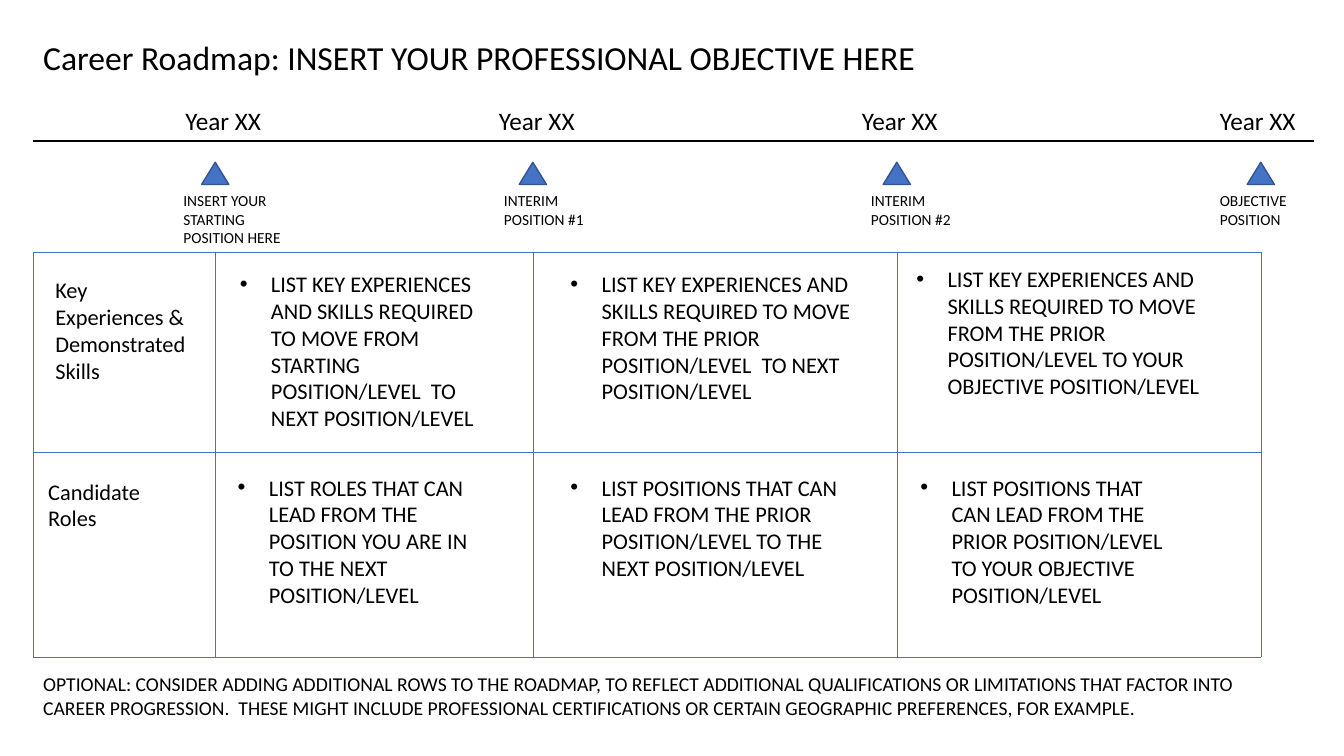
from collections import namedtuple
from dataclasses import dataclass

from lxml.etree import SubElement
from pptx import Presentation
from pptx.dml.color import RGBColor
from pptx.enum.shapes import MSO_CONNECTOR as Connector, MSO_SHAPE as Shape
from pptx.enum.text import MSO_AUTO_SIZE as AutoSize
from pptx.oxml.ns import qn
from pptx.util import Inches, Pt


@dataclass(frozen=True)
class Theme:
    font: str = "Calibri"
    ink: RGBColor = RGBColor(0x00, 0x00, 0x00)
    accent: RGBColor = RGBColor(0x44, 0x72, 0xC4)
    marker_edge: RGBColor = RGBColor(0x32, 0x54, 0x91)
    title: float = 24
    year: float = 18
    body: float = 16
    note: float = 14
    label: float = 11
    axis_width: float = 1.5
    marker_width: float = 1
    grid_width: float = 0.5


THEME = Theme()
Box = namedtuple("Box", "left top width height")
Stop = namedtuple("Stop", "x year_dx label_dx label_width label_height label")
Entry = namedtuple("Entry", "dx dy width height text")

STOPS = [
    Stop(2.14, -0.4, -0.42, 1.32, 0.66, "INSERT YOUR STARTING POSITION HERE"),
    Stop(5.29, -0.44, -0.39, 1.04, 0.47, "INTERIM POSITION #1"),
    Stop(8.9, -0.45, -0.36, 1, 0.47, "INTERIM POSITION #2"),
    Stop(12.51, -0.51, -0.51, 1.04, 0.47, "OBJECTIVE POSITION"),
]
EXPERIENCE = "LIST KEY EXPERIENCES AND SKILLS REQUIRED TO MOVE FROM "
POSITIONS = "LIST POSITIONS THAT CAN LEAD FROM THE PRIOR POSITION/LEVEL TO "
ROWS = [
    [
        Entry(0.12, 0.19, 1.61, 1.18, "Key Experiences & Demonstrated Skills"),
        Entry(0.14, 0.13, 2.77, 1.99,
              EXPERIENCE + "STARTING POSITION/LEVEL  TO NEXT POSITION/LEVEL"),
        Entry(0.27, 0.13, 3.34, 1.45,
              EXPERIENCE + "THE PRIOR POSITION/LEVEL  TO NEXT POSITION/LEVEL"),
        Entry(0.09, 0.08, 3.34, 1.45,
              EXPERIENCE + "THE PRIOR POSITION/LEVEL TO YOUR OBJECTIVE POSITION/LEVEL"),
    ],
    [
        Entry(0.05, 0.2, 1.32, 0.64, "Candidate Roles"),
        Entry(0.12, 0.16, 2.77, 1.72,
              "LIST ROLES THAT CAN LEAD FROM THE POSITION YOU ARE IN "
              "TO THE NEXT POSITION/LEVEL"),
        Entry(0.27, 0.16, 3.2, 1.72, POSITIONS + "THE NEXT POSITION/LEVEL"),
        Entry(0.13, 0.16, 2.77, 1.99, POSITIONS + "YOUR OBJECTIVE POSITION/LEVEL"),
    ],
]
ROW_HEIGHTS = [1.99, 2.03]
OPTIONAL_NOTE = (
    "OPTIONAL: CONSIDER ADDING ADDITIONAL ROWS TO THE ROADMAP, TO REFLECT ADDITIONAL "
    "QUALIFICATIONS OR LIMITATIONS THAT FACTOR INTO CAREER PROGRESSION.  THESE MIGHT "
    "INCLUDE PROFESSIONAL CERTIFICATIONS OR CERTAIN GEOGRAPHIC PREFERENCES, FOR EXAMPLE."
)


def apply_format(target, values):
    for name, value in values.items():
        setattr(target, name, value)


def add_bullet(paragraph):
    properties = paragraph._p.get_or_add_pPr()
    properties.set("marL", str(Inches(0.31)))
    properties.set("indent", str(Inches(-0.31)))
    SubElement(properties, qn("a:buFont"), typeface="Arial")
    SubElement(properties, qn("a:buChar"), char="•")


def add_text(slide, box, text, size, bulleted=False):
    frame = slide.shapes.add_textbox(*map(Inches, box)).text_frame
    apply_format(frame, {"word_wrap": True, "auto_size": AutoSize.SHAPE_TO_FIT_TEXT})
    paragraph = frame.paragraphs[0]
    if bulleted:
        add_bullet(paragraph)
    run = paragraph.add_run()
    run.text = text
    apply_format(run.font, {"name": THEME.font, "size": Pt(size)})
    run.font.color.rgb = THEME.ink


def add_rule(slide, start, end, color, width):
    rule = slide.shapes.add_connector(
        Connector.STRAIGHT, *map(Inches, (*start, *end)))
    rule.line.color.rgb = color
    rule.line.width = Pt(width)
    SubElement(rule._element.spPr, qn("a:effectLst"))


def add_marker(slide, box):
    marker = slide.shapes.add_shape(Shape.ISOSCELES_TRIANGLE, *map(Inches, box))
    marker.shadow.inherit = False
    marker.fill.solid()
    marker.fill.fore_color.rgb = THEME.accent
    marker.line.color.rgb = THEME.marker_edge
    marker.line.width = Pt(THEME.marker_width)


def build_timeline(slide, box):
    axis_y = box.top + 0.4
    add_rule(slide, (box.left, axis_y), (box.left + box.width, axis_y),
             THEME.ink, THEME.axis_width)
    for stop in STOPS:
        add_text(slide, Box(stop.x + stop.year_dx, box.top, 1.32, 0.4),
                 "Year XX", THEME.year)
        add_marker(slide, Box(stop.x - 0.14, axis_y + 0.21, 0.27, 0.22))
        add_text(slide, Box(stop.x + stop.label_dx, axis_y + 0.45,
                            stop.label_width, stop.label_height),
                 stop.label, THEME.label)


def build_roadmap(slide, box):
    right, bottom = box.left + box.width, box.top + box.height
    columns = [box.left] + [stop.x for stop in STOPS]
    row_tops = [box.top + sum(ROW_HEIGHTS[:i]) for i in range(len(ROW_HEIGHTS) + 1)]
    edges = [((x, box.top), (x, bottom)) for x in columns]
    edges += [((box.left, y), (right, y)) for y in row_tops]
    for start, end in edges:
        add_rule(slide, start, end, THEME.accent, THEME.grid_width)
    for top, entries in zip(row_tops, ROWS):
        for column, (left, entry) in enumerate(zip(columns, entries)):
            add_text(slide, Box(left + entry.dx, top + entry.dy,
                                entry.width, entry.height),
                     entry.text, THEME.body, bulleted=column > 0)


def main():
    deck = Presentation()
    apply_format(deck, {"slide_width": Inches(13.33), "slide_height": Inches(7.5)})
    slide = deck.slides.add_slide(deck.slide_layouts[6])
    add_text(slide, Box(0.33, 0.32, 9.87, 0.5),
             "Career Roadmap: INSERT YOUR PROFESSIONAL OBJECTIVE HERE", THEME.title)
    build_timeline(slide, Box(0.33, 1, 12.7, 1.5))
    build_roadmap(slide, Box(0.33, 2.5, 12.18, 4.02))
    add_text(slide, Box(0.33, 6.62, 12.46, 0.57), OPTIONAL_NOTE, THEME.note)
    deck.save("out.pptx")


if __name__ == "__main__":
    main()
